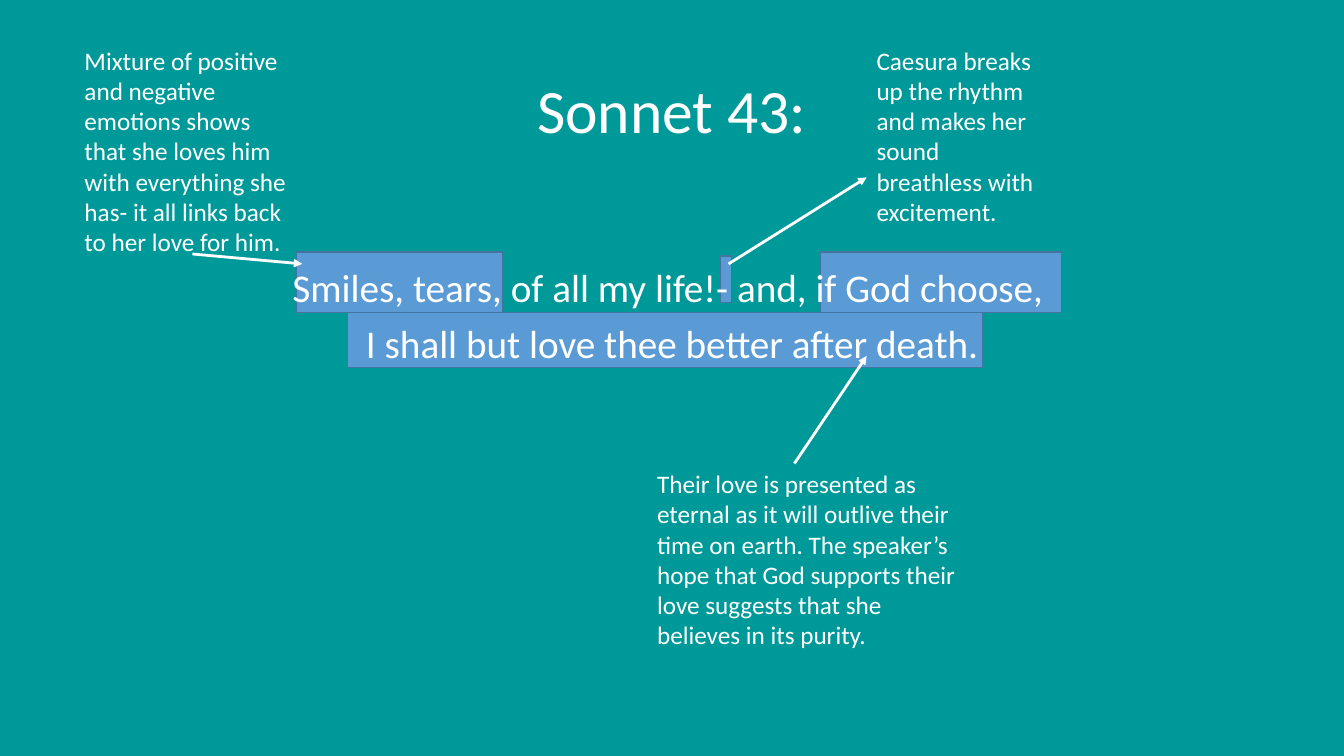
from lxml import etree
from pptx import Presentation
from pptx.dml.color import RGBColor
from pptx.enum.shapes import MSO_CONNECTOR, MSO_SHAPE
from pptx.enum.text import MSO_ANCHOR, MSO_AUTO_SIZE, PP_ALIGN
from pptx.oxml.ns import qn
from pptx.util import Cm, Pt

RECT = MSO_SHAPE.RECTANGLE
STRAIGHT = MSO_CONNECTOR.STRAIGHT
TOP, MIDDLE = MSO_ANCHOR.TOP, MSO_ANCHOR.MIDDLE
NO_FIT, GROW = MSO_AUTO_SIZE.NONE, MSO_AUTO_SIZE.SHAPE_TO_FIT_TEXT
LEFT, CENTER = PP_ALIGN.LEFT, PP_ALIGN.CENTER

FONT = "Calibri"
COLORS = {"background": "009999", "highlight": "5B9BD5",
          "border": "43739E", "text": "FFFFFF"}

HIGHLIGHTS = [
    (20.68, 6.35, 6.07, 1.52),
    (18.16, 6.45, 0.28, 1.17),
    (8.76, 7.87, 16, 1.4),
    (7.47, 6.35, 5.21, 1.52),
]
QUOTE = ["Smiles, tears, of all my life!- and, if God choose, ",
         "I shall but love thee better after death."]
NOTES = [
    ((1.88, 1.01, 5.74, 5.64),
     "Mixture of positive and negative emotions shows that she loves him "
     "with everything she has- it all links back to her love for him."),
    ((21.84, 1.01, 4.47, 4.88),
     "Caesura breaks up the rhythm and makes her sound breathless with "
     "excitement."),
    ((16.31, 11.68, 8.05, 4.88),
     "Their love is presented as eternal as it will outlive their time on "
     "earth. The speaker’s hope that God supports their love suggests that "
     "she believes in its purity."),
]
ARROWS = [
    (4.85, 6.4, 7.62, 6.65),
    (18.36, 6.65, 21.84, 4.47),
    (20.02, 11.68, 21.84, 8.97),
]


def rgb(name):
    """Return the named colour."""
    return RGBColor.from_string(COLORS[name])


class SlideBuilder:
    """Hold the slide and its style, and add each kind of element."""

    def __init__(self, prs):
        """Add a slide with a plain background."""
        self.s = prs.slides.add_slide(prs.slide_layouts[1])
        fill = self.s.background.fill
        fill.solid()
        fill.fore_color.rgb = rgb("background")

    def add_text(self, tf, lines, size, align, spacing=None, gap=0):
        """Add each line as an unbulleted paragraph."""
        tf.word_wrap = True
        for i, line in enumerate(lines):
            p = tf.add_paragraph() if i else tf.paragraphs[0]
            pPr = p._p.get_or_add_pPr()
            pPr.set("marL", "0")
            pPr.set("indent", "0")
            etree.SubElement(pPr, qn("a:buNone"))
            p.alignment = align
            p.line_spacing = spacing
            p.space_before = Pt(gap if i else 0)
            r = p.add_run()
            r.text = line
            r.font.name = FONT
            r.font.size = Pt(size)
            r.font.color.rgb = rgb("text")

    def highlight(self, box):
        """Add a bordered rectangle behind the quotation."""
        sp = self.s.shapes.add_shape(RECT, *map(Cm, box))
        sp.shadow.inherit = False
        sp.fill.solid()
        sp.fill.fore_color.rgb = rgb("highlight")
        sp.line.color.rgb = rgb("border")
        sp.line.width = Pt(1)

    def placeholder(self, idx, box, lines, size, anchor, gap=0):
        """Fill a placeholder and bring it in front of the highlights."""
        sp = self.s.placeholders[idx]
        sp.left, sp.top, sp.width, sp.height = map(Cm, box)
        tf = sp.text_frame
        tf.auto_size = NO_FIT
        tf.vertical_anchor = anchor
        self.add_text(tf, lines, size, CENTER, 0.9, gap)
        sp._element.getparent().append(sp._element)

    def note(self, box, text):
        """Add an annotation."""
        tf = self.s.shapes.add_textbox(*map(Cm, box)).text_frame
        tf.auto_size = GROW
        self.add_text(tf, [text], 18, LEFT)

    def arrow(self, ends):
        """Add a line with an arrowhead at its end."""
        cxn = self.s.shapes.add_connector(STRAIGHT, *map(Cm, ends))
        cxn.line.color.rgb = rgb("text")
        cxn.line.width = Pt(2)
        spPr = cxn._element.spPr
        etree.SubElement(spPr.find(qn("a:ln")), qn("a:tailEnd"),
                         type="triangle")
        etree.SubElement(spPr, qn("a:effectLst"))


def main():
    """Build and save the sonnet slide."""
    prs = Presentation()
    prs.slide_width, prs.slide_height = Cm(33.87), Cm(19.05)
    slide = SlideBuilder(prs)
    for box in HIGHLIGHTS:
        slide.highlight(box)
    slide.placeholder(0, (2.33, 1.01, 29.21, 3.68), ["Sonnet 43:"], 44, MIDDLE)
    slide.placeholder(1, (2.33, 6.64, 29.21, 10.53), QUOTE, 28, TOP, 10)
    for box, text in NOTES:
        slide.note(box, text)
    for ends in ARROWS:
        slide.arrow(ends)
    prs.save("out.pptx")


if __name__ == "__main__":
    main()
